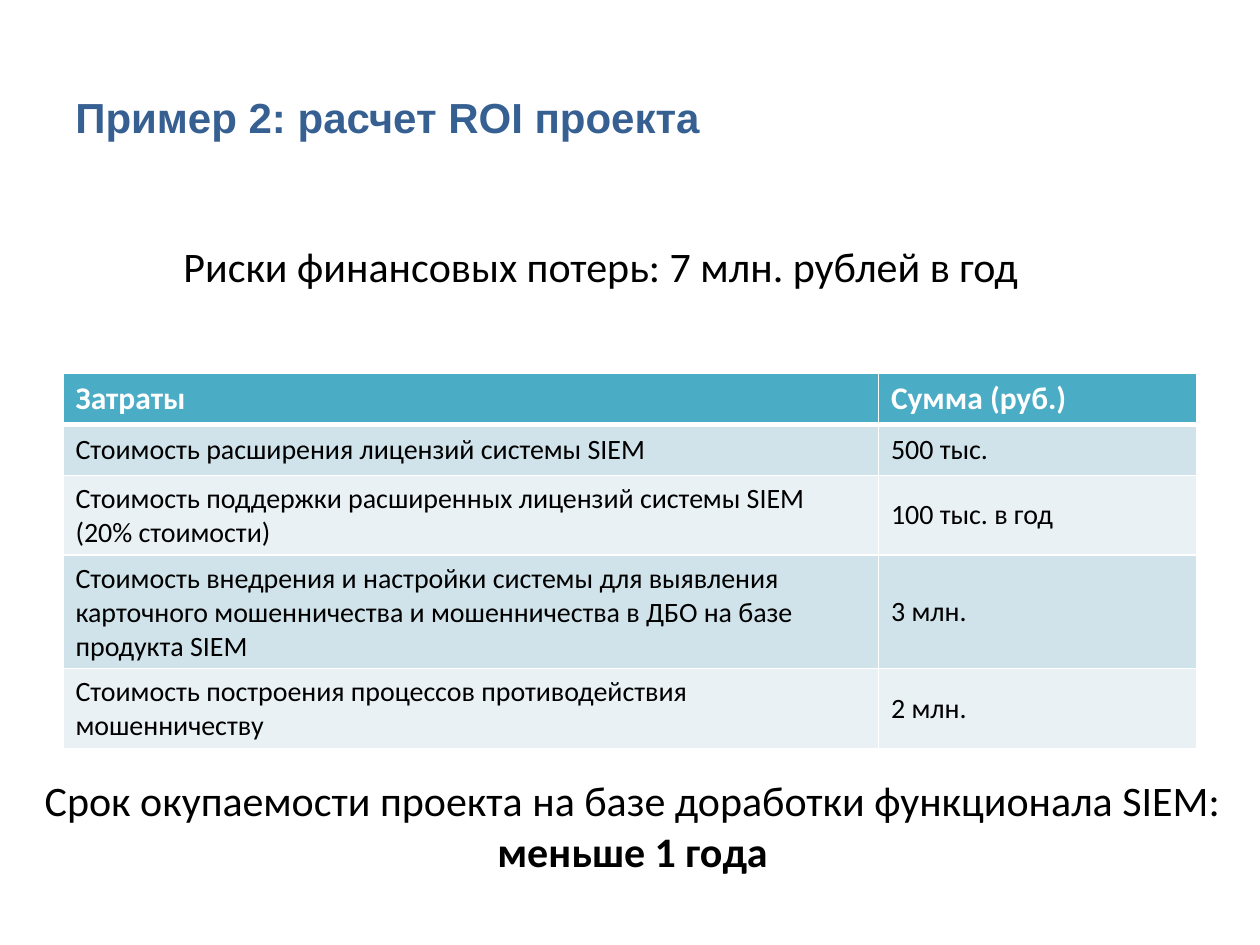
"""Build the ROI example slide with its cost table."""
from lxml import etree
from pptx import Presentation
from pptx import util as u
from pptx.dml.color import RGBColor
from pptx.enum import text
from pptx.oxml import ns

COSTS = [
    ("Затраты", "Сумма (руб.)"),
    ("Стоимость расширения лицензий системы SIEM", "500 тыс."),
    ("Стоимость поддержки расширенных лицензий системы SIEM (20% стоимости)",
     "100 тыс. в год"),
    ("Стоимость внедрения и настройки системы для выявления карточного "
     "мошенничества и мошенничества в ДБО на базе продукта SIEM", "3 млн."),
    ("Стоимость построения процессов противодействия мошенничеству", "2 млн."),
]
COLUMN_WIDTHS = (466, 182)
ROW_HEIGHT = 29.2
HEADER_FILL = "4BACC6"
BAND_FILLS = ("E9F1F5", "D0E3EA")


def color(code):
    """Return the colour for a hex string."""
    return RGBColor.from_string(code)


def add_span(para, words, size, code="000000", bold=False, font="Calibri"):
    """Add one formatted run to a paragraph."""
    span = para.add_run()
    span.text = words
    span.font.name = font
    span.font.size = u.Pt(size)
    span.font.bold = bold
    span.font.color.rgb = color(code)


def add_box(page, left, top, width, height, anchor=text.MSO_ANCHOR.TOP):
    """Add an empty wrapping text box and return its text frame."""
    box = page.shapes.add_textbox(u.Pt(left), u.Pt(top), u.Pt(width), u.Pt(height))
    frame = box.text_frame
    frame.word_wrap = True
    frame.vertical_anchor = anchor
    return frame


def add_title(page, words):
    """Add the slide heading."""
    frame = add_box(page, 36, 21.6, 648, 90, text.MSO_ANCHOR.MIDDLE)
    add_span(frame.paragraphs[0], words, 24, "376092", True, "Arial")


def add_statement(page, left, top, width, height, lines):
    """Add centred lines, each given as its words and a bold flag."""
    frame = add_box(page, left, top, width, height)
    for index, (words, bold) in enumerate(lines):
        para = frame.add_paragraph() if index else frame.paragraphs[0]
        para.alignment = text.PP_ALIGN.CENTER
        add_span(para, words, 24, bold=bold)


def set_borders(cell, widths):
    """Draw white cell borders from a mapping of side to width in points."""
    properties = cell._tc.get_or_add_tcPr()
    for side, width in widths.items():
        line = etree.SubElement(properties, ns.qn(f"a:ln{side}"), w=str(u.Pt(width)))
        fill = etree.SubElement(line, ns.qn("a:solidFill"))
        etree.SubElement(fill, ns.qn("a:srgbClr"), val="FFFFFF")


def fill_cell(cell, words, row):
    """Write and format one table cell according to its row."""
    header = row == 0
    set_borders(cell, {"L": 1, "R": 1, "T": 3 if row == 1 else 1, "B": 3 if header else 1})
    cell.fill.solid()
    cell.fill.fore_color.rgb = color(HEADER_FILL if header else BAND_FILLS[row % 2])
    cell.vertical_anchor = text.MSO_ANCHOR.MIDDLE
    add_span(cell.text_frame.paragraphs[0], words, 18 if header else 16,
             "FFFFFF" if header else "000000", header)


def add_cost_table(page, left, top):
    """Add the table of project costs."""
    table = page.shapes.add_table(
        len(COSTS), len(COLUMN_WIDTHS), u.Pt(left), u.Pt(top),
        u.Pt(sum(COLUMN_WIDTHS)), u.Pt(ROW_HEIGHT * len(COSTS))).table
    for column, width in zip(table.columns, COLUMN_WIDTHS):
        column.width = u.Pt(width)
    for row, entries in enumerate(COSTS):
        for column, words in enumerate(entries):
            fill_cell(table.cell(row, column), words, row)


def main():
    """Build and save the slide."""
    deck = Presentation()
    deck.slide_width, deck.slide_height = u.Pt(720), u.Pt(540)
    page = deck.slides.add_slide(deck.slide_layouts[6])
    add_title(page, "Пример 2: расчет ROI проекта")
    add_statement(page, 60, 134, 566.6, 36,
                  [("Риски финансовых потерь: 7 млн. рублей в год", False)])
    add_statement(page, 1.5, 439.2, 720, 65.5, [
        ("Срок окупаемости проекта на базе доработки функционала SIEM:", False),
        ("меньше 1 года", True)])
    add_cost_table(page, 36, 213.2)
    deck.save("out.pptx")


if __name__ == "__main__":
    main()
